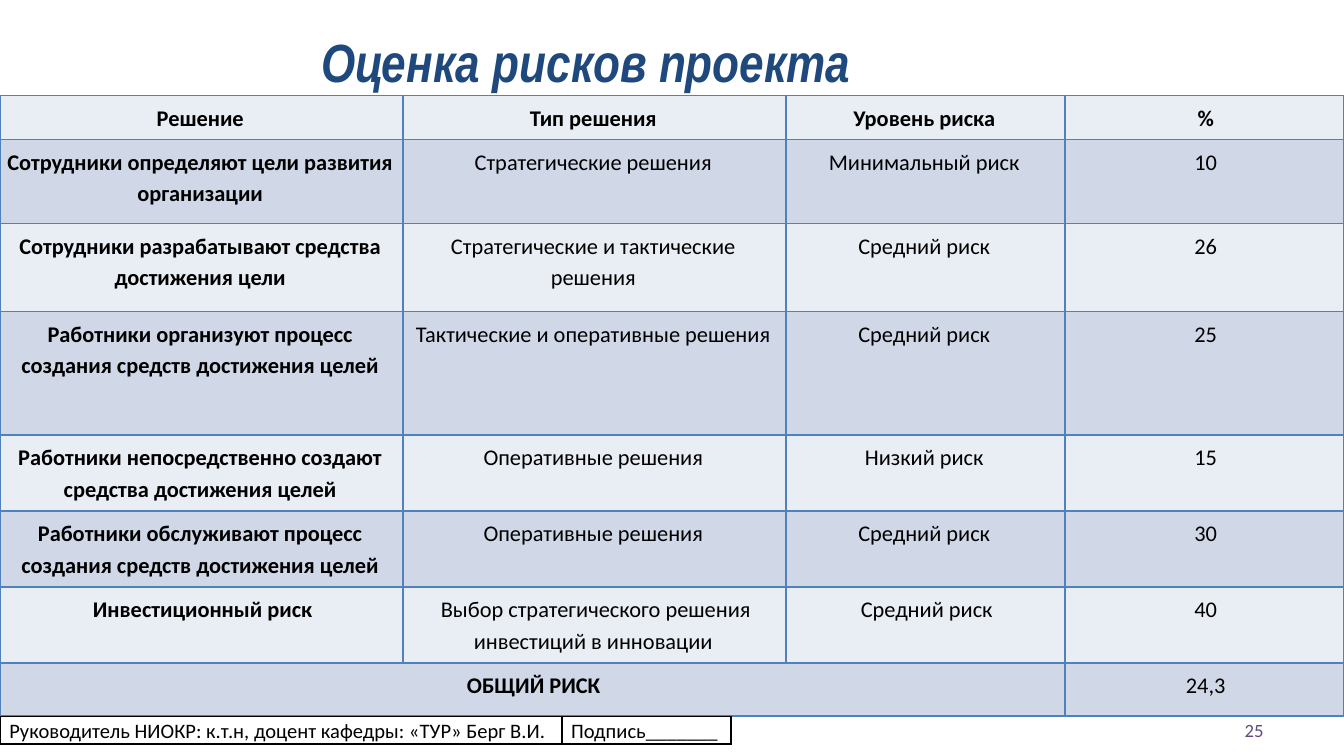
from dataclasses import dataclass
from lxml.etree import SubElement
from pptx import Presentation
from pptx.dml.color import RGBColor
from pptx.enum.text import MSO_ANCHOR, PP_ALIGN
from pptx.oxml.ns import qn
from pptx.util import Inches, Pt


@dataclass(frozen=True)
class Theme:
    head: str = "Arial Narrow"
    body: str = "Calibri"
    navy: str = "1F497D"
    plum: str = "604A7B"
    ink: str = "000000"
    edge: str = "4F81BD"
    bands: tuple = ("E9EDF4", "D0D8E8")
    big: float = 28.8
    cell: float = 12
    sign: float = 11
    page: float = 10


look = Theme()
deck = Presentation()
deck.slide_width, deck.slide_height = Inches(10), Inches(5.625)
slide = deck.slides.add_slide(deck.slide_layouts[6])
# The slide is a grid of 100 columns by 100 rows.
col, row = deck.slide_width / 100, deck.slide_height / 100


def write(frame, text, size, font=look.body, color=look.ink, bold=False,
          italic=False, align=PP_ALIGN.CENTER, line=None, after=None):
    frame.word_wrap = True
    para = frame.paragraphs[0]
    para.alignment = align
    if line:
        para.line_spacing = line
    if after:
        para.space_after = Pt(after)
    run = para.add_run()
    run.text = text
    run.font.size, run.font.name = Pt(size), font
    run.font.bold, run.font.italic = bold, italic
    run.font.color.rgb = RGBColor.from_string(color)


def grid(top, widths, heights, edge, insets):
    """Add a table at the left edge, with 1 pt borders and no style bands."""
    shape = slide.shapes.add_table(
        len(heights), len(widths), 0, int(top * row),
        int(sum(widths) * col), int(sum(heights) * row))
    table = shape.table
    table.first_row = table.horz_banding = False
    for part, width in zip(table.columns, widths):
        part.width = int(width * col)
    for part, height in zip(table.rows, heights):
        part.height = int(height * row)
    for cell in table.iter_cells():
        (cell.margin_left, cell.margin_top,
         cell.margin_right, cell.margin_bottom) = map(Inches, insets)
        props = cell._tc.get_or_add_tcPr()
        for side in ("a:lnL", "a:lnR", "a:lnT", "a:lnB"):
            rule = SubElement(props, qn(side), w=str(Pt(1)))
            fill = SubElement(rule, qn("a:solidFill"))
            SubElement(fill, qn("a:srgbClr"), val=edge)
        cell.fill.background()
    return table


labels = (
    ("Оценка рисков проекта", (0, 4.1, 87.2, 8), PP_ALIGN.CENTER,
     dict(size=look.big, font=look.head, color=look.navy, bold=True, italic=True)),
    ("25", (71.7, 93.9, 23.3, 5.3), PP_ALIGN.RIGHT,
     dict(size=look.page, color=look.plum)),
)
for text, (x, y, w, h), align, style in labels:
    box = slide.shapes.add_textbox(int(x * col), int(y * row), int(w * col), int(h * row))
    box.text_frame.vertical_anchor = MSO_ANCHOR.MIDDLE
    write(box.text_frame, text, align=align, **style)

risks = (
    ("Решение", "Тип решения", "Уровень риска", " %"),
    ("Сотрудники определяют цели развития организации",
     "Стратегические решения", "Минимальный риск", " 10"),
    ("Сотрудники разрабатывают средства достижения цели",
     "Стратегические и тактические решения", "Средний риск", " 26"),
    ("Работники организуют процесс создания средств достижения целей",
     "Тактические и оперативные решения", "Средний риск", " 25"),
    ("Работники непосредственно создают средства достижения целей",
     "Оперативные решения", "Низкий риск", " 15"),
    ("Работники обслуживают процесс создания средств достижения целей",
     "Оперативные решения", "Средний риск", " 30"),
    (" Инвестиционный риск",
     " Выбор стратегического решения инвестиций в инновации",
     " Средний риск", " 40"),
    (" ОБЩИЙ РИСК", "", "", " 24,3"),
)
table = grid(12.63, (30, 28.5, 20.75, 20.75),
             (5.85, 11.1, 11.65, 16.35, 10.05, 10.05, 10.05, 7.05),
             look.edge, (0.04, 0.04, 0.06, 0))
table.cell(7, 0).merge(table.cell(7, 2))
for r, texts in enumerate(risks):
    for c, text in enumerate(texts):
        cell = table.cell(r, c)
        cell.fill.solid()
        cell.fill.fore_color.rgb = RGBColor.from_string(look.bands[r % 2])
        if text:
            write(cell.text_frame, text, look.cell, bold=r == 0 or c == 0,
                  line=1.15, after=10)

signs = ("Руководитель НИОКР: к.т.н, доцент кафедры: «ТУР» Берг В.И.", "Подпись_______")
table = grid(94.8, (41.8, 12.6), (3.6,), look.ink, (0.07, 0, 0.07, 0))
for cell, text in zip(table.iter_cells(), signs):
    write(cell.text_frame, text, look.sign, align=PP_ALIGN.LEFT, line=1.07)

deck.save("out.pptx")
